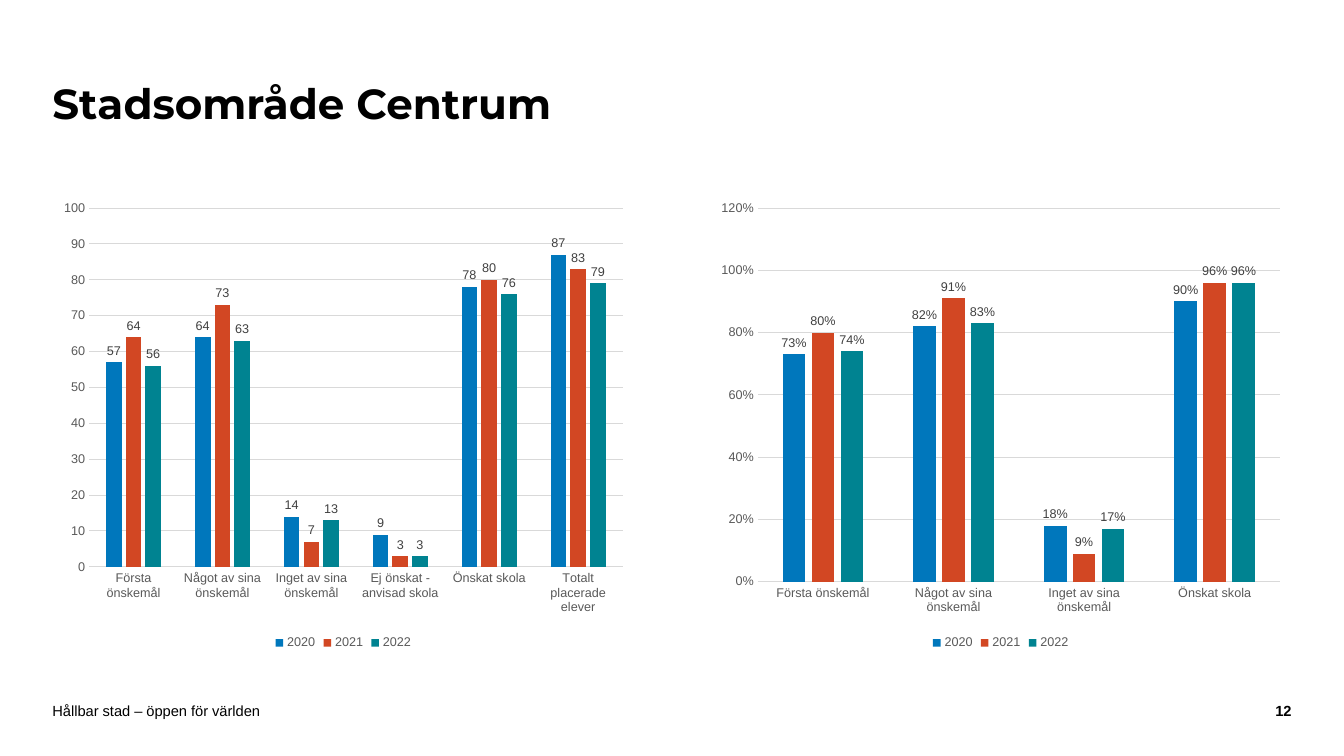
import dataclasses

import pptx
import pptx.chart.data
import pptx.dml.color
import pptx.enum.chart
import pptx.enum.text
import pptx.util

INCH = pptx.util.Inches
ANCHOR = pptx.enum.text.MSO_ANCHOR
ALIGN = pptx.enum.text.PP_ALIGN
CHART = pptx.enum.chart


@dataclasses.dataclass(frozen=True)
class Theme:
    heading_font: str = "Montserrat"
    body_font: str = "Arial"
    title_size: float = 30
    footer_size: float = 10.5
    chart_size: float = 9
    ink: str = "000000"
    axis_text: str = "595959"
    label_text: str = "404040"
    grid: str = "D9D9D9"
    series: tuple = ("0077BC", "D24723", "008391")


THEME = Theme()
WIDTH, HEIGHT = 13.33, 7.5
MARGIN = 0.52
CHART_WIDTH = 5.77
YEARS = ("2020", "2021", "2022")
COUNTS = {
    "Första önskemål": (57, 64, 56),
    "Något av sina önskemål": (64, 73, 63),
    "Inget av sina önskemål": (14, 7, 13),
    "Ej önskat - anvisad skola": (9, 3, 3),
    "Önskat skola": (78, 80, 76),
    "Totalt placerade elever": (87, 83, 79),
}
SHARES = {
    "Första önskemål": (0.73, 0.80, 0.74),
    "Något av sina önskemål": (0.82, 0.91, 0.83),
    "Inget av sina önskemål": (0.18, 0.09, 0.17),
    "Önskat skola": (0.90, 0.96, 0.96),
}


def color(value):
    return pptx.dml.color.RGBColor.from_string(value)


def style_font(font, size, ink, name=THEME.body_font, bold=False):
    font.name, font.size, font.bold = name, pptx.util.Pt(size), bold
    font.color.rgb = color(ink)


def add_text(page, box, text, size, name=THEME.body_font, bold=False,
             align=ALIGN.LEFT, inset=0, spacing=1.0):
    frame = page.shapes.add_textbox(*map(INCH, box)).text_frame
    frame.word_wrap = True
    frame.vertical_anchor = ANCHOR.MIDDLE
    frame.margin_left = frame.margin_right = 0
    frame.margin_top = frame.margin_bottom = INCH(inset)
    para = frame.paragraphs[0]
    para.text = text
    para.alignment = align
    para.line_spacing = spacing
    style_font(para.font, size, THEME.ink, name, bold)


def add_title(page, box, text):
    add_text(page, box, text, THEME.title_size, THEME.heading_font,
             bold=True, inset=0.05, spacing=0.9)


def add_footer(page, box, text, number):
    left, top, width, height = box
    number_width = 0.64
    add_text(page, (left, top, 9.45, height), text, THEME.footer_size)
    add_text(page, (left + width - number_width, top, number_width, height),
             number, THEME.footer_size, bold=True, align=ALIGN.RIGHT)


def style_axes(chart, top, step, number_format):
    category, value = chart.category_axis, chart.value_axis
    for axis in (category, value):
        axis.major_tick_mark = axis.minor_tick_mark = CHART.XL_TICK_MARK.NONE
        style_font(axis.tick_labels.font, THEME.chart_size, THEME.axis_text)
    value.minimum_scale, value.maximum_scale, value.major_unit = 0, top, step
    value.tick_labels.number_format = number_format
    value.tick_labels.number_format_is_linked = False
    value.format.line.fill.background()
    for line in (category.format.line, value.major_gridlines.format.line):
        line.color.rgb = color(THEME.grid)
        line.width = pptx.util.Pt(0.75)


def add_columns(page, box, rows, top, step, number_format):
    data = pptx.chart.data.CategoryChartData(number_format=number_format)
    data.categories = list(rows)
    for year, values in zip(YEARS, zip(*rows.values())):
        data.add_series(year, values)
    chart = page.shapes.add_chart(
        CHART.XL_CHART_TYPE.COLUMN_CLUSTERED, *map(INCH, box), data).chart
    style_font(chart.font, 10, THEME.ink)
    chart.has_title = False
    style_axes(chart, top, step, number_format)

    # Legend
    chart.has_legend = True
    chart.legend.position = CHART.XL_LEGEND_POSITION.BOTTOM
    chart.legend.include_in_layout = False
    style_font(chart.legend.font, THEME.chart_size, THEME.axis_text)

    # Columns and their values
    plot = chart.plots[0]
    plot.gap_width, plot.overlap, plot.vary_by_categories = 219, -27, False
    for series, fill in zip(plot.series, THEME.series):
        series.format.fill.solid()
        series.format.fill.fore_color.rgb = color(fill)
        series.invert_if_negative = False
        labels = series.data_labels
        labels.show_value = True
        labels.position = CHART.XL_LABEL_POSITION.OUTSIDE_END
        labels.number_format = number_format
        labels.number_format_is_linked = False
        style_font(labels.font, THEME.chart_size, THEME.label_text)


def main():
    deck = pptx.Presentation()
    deck.slide_width, deck.slide_height = INCH(WIDTH), INCH(HEIGHT)
    page = deck.slides.add_slide(deck.slide_layouts[6])

    add_title(page, (MARGIN, 0.42, 10.03, 1.26), "Stadsområde Centrum")

    # Pupils on the left, shares on the right
    right = WIDTH - MARGIN - CHART_WIDTH
    add_columns(page, (MARGIN, 1.9, CHART_WIDTH, 4.59), COUNTS, 100, 10, "General")
    add_columns(page, (right, 1.9, CHART_WIDTH, 4.59), SHARES, 1.2, 0.2, "0%")

    add_footer(page, (MARGIN, 6.97, WIDTH - 2 * MARGIN, 0.16),
               "Hållbar stad – öppen för världen", "12")
    deck.save("out.pptx")


if __name__ == "__main__":
    main()
